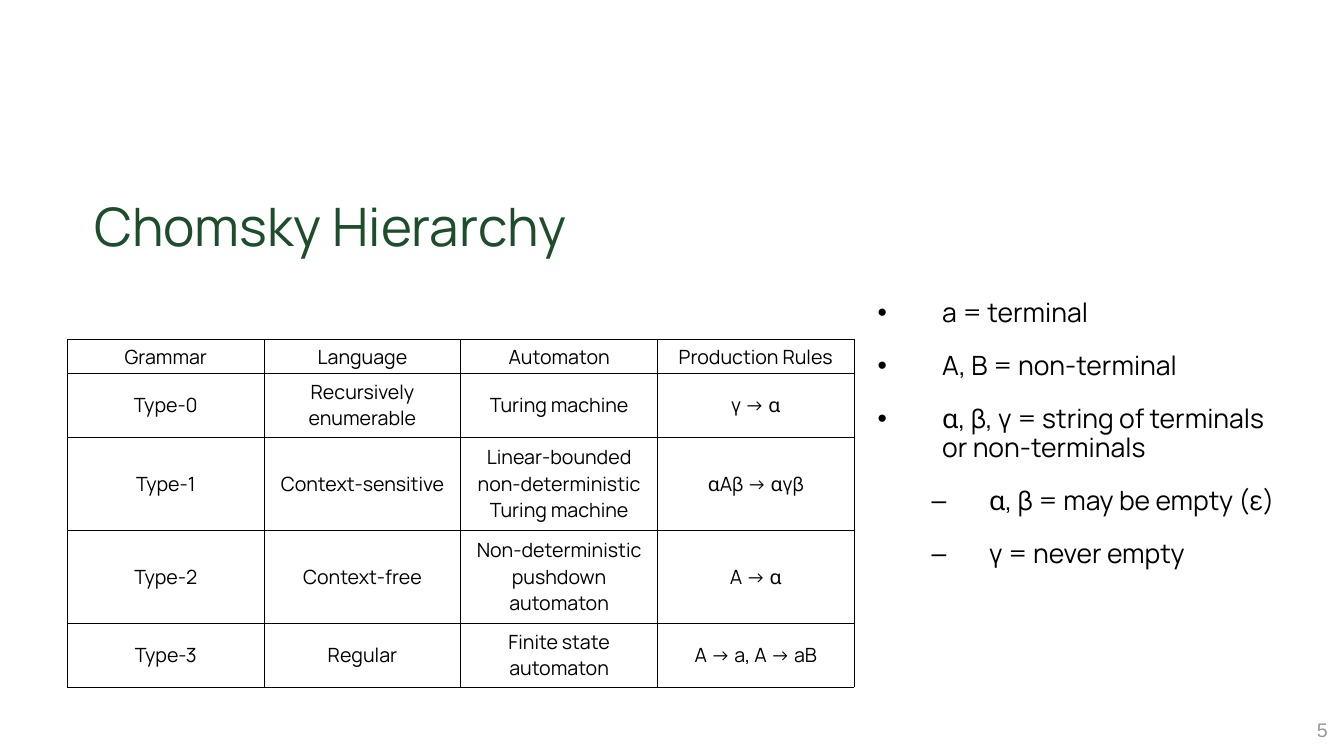
from lxml.etree import SubElement
from pptx import Presentation
from pptx.dml.color import RGBColor
from pptx.enum.text import MSO_ANCHOR, PP_ALIGN
from pptx.oxml.ns import qn
from pptx.util import Inches, Pt

GREEN = RGBColor(0x1E, 0x4D, 0x2B)
BLACK = RGBColor(0, 0, 0)
GREY = RGBColor(0x99, 0x99, 0x9A)

WIDTH, HEIGHT = Inches(26.67), Inches(15)
TITLE = "Chomsky Hierarchy"
PAGE_NUMBER = "5"
HIERARCHY = [
    ("Grammar", "Language", "Automaton", "Production Rules"),
    ("Type-0", "Recursively enumerable", "Turing machine", "γ → ɑ"),
    ("Type-1", "Context-sensitive", "Linear-bounded non-deterministic Turing machine", "ɑAβ → ɑγβ"),
    ("Type-2", "Context-free", "Non-deterministic pushdown automaton", "A → ɑ"),
    ("Type-3", "Regular", "Finite state automaton", "A → a, A → aB"),
]
LINES_PER_ROW = [1, 2, 3, 3, 2]
NOTATION = [
    (0, "a = terminal"),
    (0, "A, B = non-terminal"),
    (0, "ɑ, β, γ = string of terminals or non-terminals"),
    (1, "ɑ, β = may be empty (ε)"),
    (1, "γ = never empty"),
]
BULLETS = [("•", 1.28, -1.28), ("–", 2.21, -1.14)]


def write(paragraph, text, size, color=BLACK, font="Manrope", align=PP_ALIGN.LEFT):
    paragraph.alignment = align
    span = paragraph.add_run()
    span.text = text
    span.font.size = Pt(size)
    span.font.name = font
    span.font.bold = False
    span.font.color.rgb = color


def add_box(page, left, top, width, height, inset=0.1, wrap=True, anchor=MSO_ANCHOR.TOP):
    box = page.shapes.add_textbox(
        int(WIDTH * left), int(HEIGHT * top), int(WIDTH * width), int(HEIGHT * height))
    frame = box.text_frame
    frame.word_wrap = wrap
    frame.vertical_anchor = anchor
    frame.margin_left = frame.margin_right = Inches(inset)
    frame.margin_top = frame.margin_bottom = Inches(inset)
    return frame


def add_bullet(paragraph, level):
    symbol, margin, indent = BULLETS[level]
    paragraph.level = level
    properties = paragraph._p.get_or_add_pPr()
    properties.set("marL", str(Inches(margin)))
    properties.set("indent", str(Inches(indent)))
    SubElement(properties, qn("a:buFont"), typeface="Arial")
    SubElement(properties, qn("a:buChar"), char=symbol)


def add_borders(cell):
    properties = cell._tc.get_or_add_tcPr()
    for side in ("lnL", "lnR", "lnT", "lnB"):
        line = SubElement(properties, qn(f"a:{side}"), w=str(Pt(1)))
        fill = SubElement(line, qn("a:solidFill"))
        SubElement(fill, qn("a:srgbClr"), val=str(BLACK))


def add_notation(page):
    frame = add_box(page, 0.6494, 0.3893, 0.3142, 0.5187)
    for index, (level, text) in enumerate(NOTATION):
        paragraph = frame.add_paragraph() if index else frame.paragraphs[0]
        paragraph.line_spacing = 0.9
        paragraph.space_before = Pt(35 if index else 0)
        add_bullet(paragraph, level)
        write(paragraph, text, 37.9)


def add_hierarchy(page):
    heights = [Inches(0.08 + 0.59 * lines) for lines in LINES_PER_ROW]
    width = int(WIDTH * 0.5853)
    columns = len(HIERARCHY[0])
    table = page.shapes.add_table(
        len(HIERARCHY), columns, int(WIDTH * 0.0502), int(HEIGHT * 0.4493),
        width, sum(heights)).table
    table.first_row = table.horz_banding = False
    for column in table.columns:
        column.width = width // columns
    for row, height, texts in zip(table.rows, heights, HIERARCHY):
        row.height = height
        for cell, text in zip(row.cells, texts):
            cell.vertical_anchor = MSO_ANCHOR.MIDDLE
            cell.margin_left = cell.margin_right = Inches(0.06)
            cell.margin_top = cell.margin_bottom = Inches(0.06)
            add_borders(cell)
            cell.fill.background()
            write(cell.text_frame.paragraphs[0], text, 28, align=PP_ALIGN.CENTER)


def main():
    deck = Presentation()
    deck.slide_width, deck.slide_height = WIDTH, HEIGHT
    page = deck.slides.add_slide(deck.slide_layouts[6])
    title = add_box(page, 0.0664, 0.2487, 0.8969, 0.112)
    write(title.paragraphs[0], TITLE, 75.7, GREEN)
    add_notation(page)
    number = add_box(page, 0.9775, 0.948, 0.0124, 0.0353, 0.05, False, MSO_ANCHOR.MIDDLE)
    write(number.paragraphs[0], PAGE_NUMBER, 28, GREY, "Arial", PP_ALIGN.RIGHT)
    add_hierarchy(page)
    deck.save("out.pptx")


if __name__ == "__main__":
    main()
